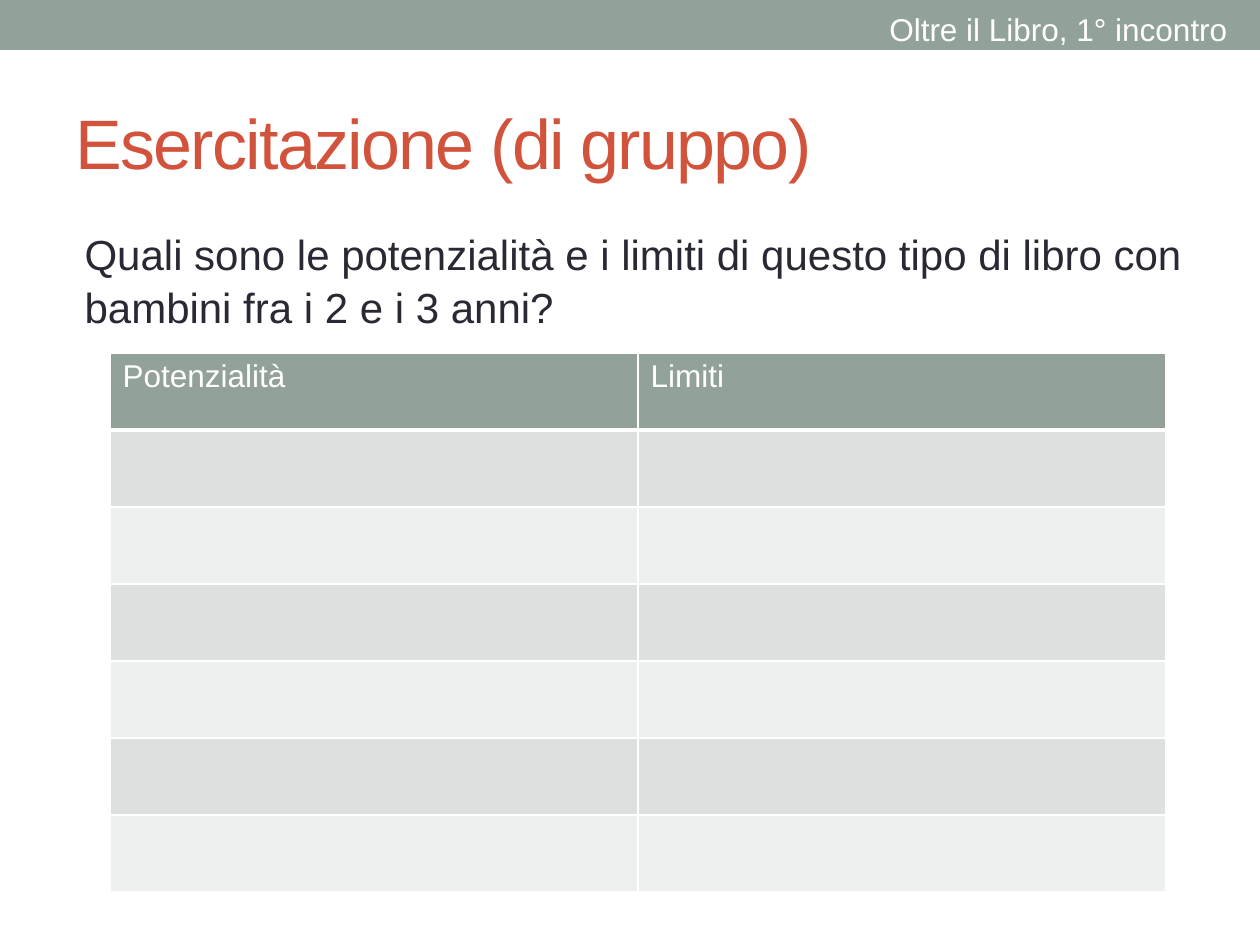
import pptx
import pptx.dml.color
import pptx.enum.shapes
import pptx.enum.text
import pptx.oxml
import pptx.oxml.ns
import pptx.util
from lxml import etree

EMU_PER_PX = 914400 / 126
FONT = "Arial"
COLORS = {
    "sage": "93A299",
    "title": "D2533C",
    "ink": "292934",
    "white": "FFFFFF",
    "dark_band": "DCE0DE",
    "light_band": "EEF0EF",
}
HEADINGS = ["Potenzialità", "Limiti"]
ROW_COUNT = 7
ROW_HEIGHT = 77
COLUMN_WIDTH = 528


def px(length):
    return pptx.util.Emu(round(length * EMU_PER_PX))


def rgb(name):
    return pptx.dml.color.RGBColor.from_string(COLORS[name])


def fill_with(part, color):
    part.fill.solid()
    part.fill.fore_color.rgb = rgb(color)


def write(frame, text, size, color):
    frame.text = text
    paragraph = frame.paragraphs[0]
    paragraph.alignment = pptx.enum.text.PP_ALIGN.LEFT
    paragraph.font.name = FONT
    paragraph.font.size = pptx.util.Pt(size)
    paragraph.font.bold = False
    paragraph.font.color.rgb = rgb(color)
    return paragraph


def place(part, left, top, width, height):
    part.left, part.top = px(left), px(top)
    part.width, part.height = px(width), px(height)


def add_band(slide):
    band = slide.shapes.add_shape(
        pptx.enum.shapes.MSO_SHAPE.RECTANGLE, 0, 0, px(1260), px(50)
    )
    band.shadow.inherit = False
    fill_with(band, "sage")
    band.line.fill.background()


def add_title(slide, text):
    title = slide.shapes.title
    place(title, 63, 73, 1134, 136)
    title.text_frame.vertical_anchor = pptx.enum.text.MSO_ANCHOR.MIDDLE
    heading = write(title.text_frame, text, 40, "title")
    heading.runs[0].font._element.set("spc", "-100")


def add_question(slide, text):
    body = slide.placeholders[1]
    place(body, 63, 220, 1134, 672)
    question = write(body.text_frame, text, 24, "ink")
    question.line_spacing = 1.05
    properties = question._p.get_or_add_pPr()
    properties.set("marL", str(px(9)))
    properties.set("indent", "0")
    etree.SubElement(properties, pptx.oxml.ns.qn("a:buNone"))


def set_borders(cell, bottom_width):
    properties = cell._tc.get_or_add_tcPr()
    for side, width in zip("LRTB", (1, 1, 1, bottom_width)):
        properties.append(pptx.oxml.parse_xml(
            f'<a:ln{side} {pptx.oxml.ns.nsdecls("a")} w="{pptx.util.Pt(width)}">'
            f'<a:solidFill><a:srgbClr val="{COLORS["white"]}"/></a:solidFill>'
            f'</a:ln{side}>'
        ))


def add_comparison(slide):
    table = slide.shapes.add_table(
        ROW_COUNT, len(HEADINGS), px(110), px(353),
        px(COLUMN_WIDTH * len(HEADINGS)), px(ROW_HEIGHT * ROW_COUNT),
    ).table
    for column in table.columns:
        column.width = px(COLUMN_WIDTH)
    for index, row in enumerate(table.rows):
        row.height = px(ROW_HEIGHT)
        band = "dark_band" if index % 2 else "light_band"
        for cell, heading in zip(row.cells, HEADINGS):
            set_borders(cell, 1 if index else 3)
            fill_with(cell, band if index else "sage")
            if index == 0:
                write(cell.text_frame, heading, 18, "white")


def add_session_label(slide, text):
    label = slide.shapes.add_textbox(px(877), px(4), px(367), px(50))
    label.text_frame.word_wrap = False
    label.text_frame.auto_size = pptx.enum.text.MSO_AUTO_SIZE.SHAPE_TO_FIT_TEXT
    write(label.text_frame, text, 18, "white")


def main():
    deck = pptx.Presentation()
    deck.slide_width, deck.slide_height = px(1260), px(945)
    slide = deck.slides.add_slide(deck.slide_layouts[1])
    add_band(slide)
    add_title(slide, "Esercitazione (di gruppo)")
    add_question(
        slide,
        "Quali sono le potenzialità e i limiti di questo tipo di libro con "
        "bambini fra i 2 e i 3 anni?",
    )
    add_comparison(slide)
    add_session_label(slide, "Oltre il Libro, 1° incontro")
    deck.save("out.pptx")


if __name__ == "__main__":
    main()
